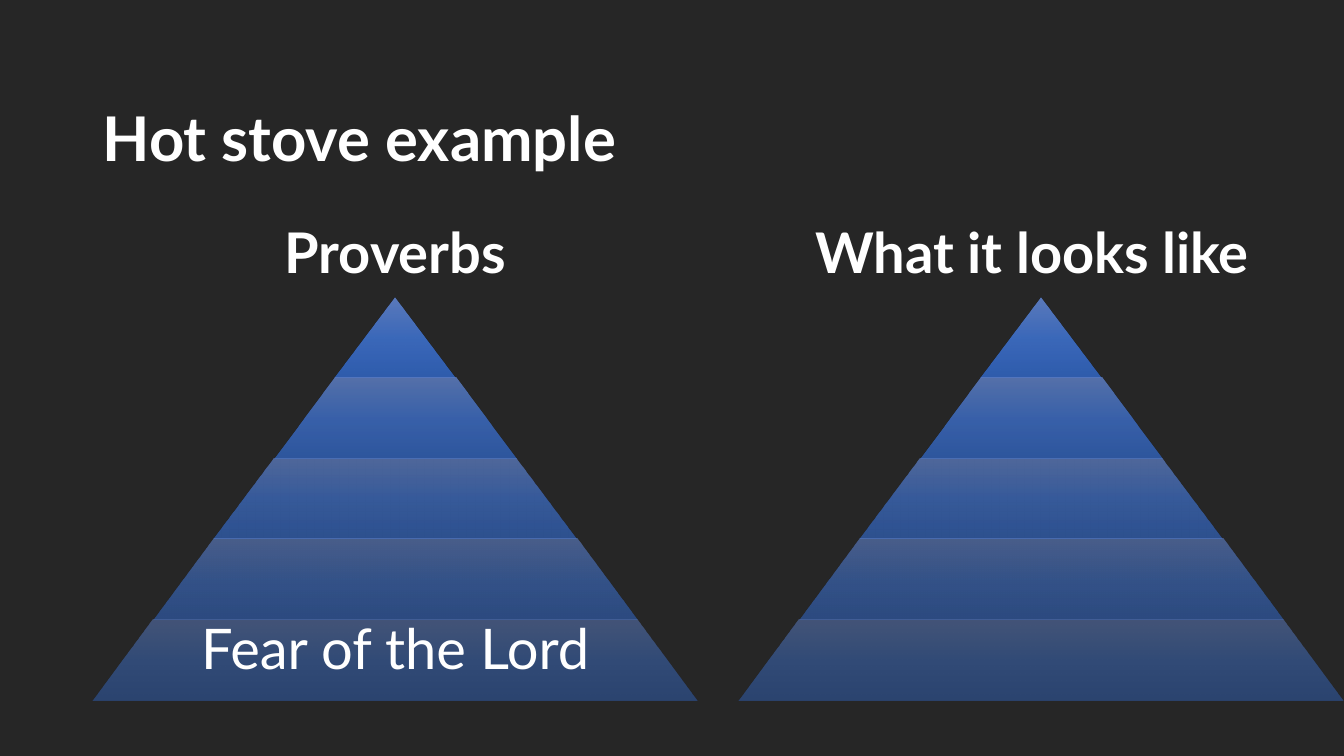
"""Build the hot stove slide: two five-tier pyramids under their headings."""
from pptx import Presentation
from pptx.dml.color import RGBColor
from pptx.enum.shapes import MSO_SHAPE
from pptx.enum.text import MSO_ANCHOR, PP_ALIGN
from pptx.oxml import parse_xml
from pptx.oxml.ns import nsdecls, qn
from pptx.util import Cm, Pt

BACKGROUND = RGBColor(0x26, 0x26, 0x26)
WHITE = RGBColor(0xFF, 0xFF, 0xFF)
TIER_COLOURS = (
    RGBColor(0x61, 0x83, 0xCB),
    RGBColor(0x3E, 0x70, 0xCA),
    RGBColor(0x30, 0x62, 0xBB),
)
FONT = "Lato"
TIER_COUNT = 5
TIER_HEIGHT = 2.03
TIER_STEP = 3.05
APEX_TOP = 7.49
BASE_WIDTH = TIER_COUNT * TIER_STEP


def write_line(frame, text, size, bold, align, spacing=1.0):
    """Write one formatted line of text into a frame."""
    frame.word_wrap = True
    para = frame.paragraphs[0]
    para.alignment = align
    para.line_spacing = spacing
    span = para.add_run()
    span.text = text
    span.font.name = FONT
    span.font.size = Pt(size)
    span.font.bold = bold
    span.font.color.rgb = WHITE


def set_title(page, text):
    """Place and fill the slide title."""
    title = page.shapes.title
    title.left, title.top = Cm(2.33), Cm(1.73)
    title.width, title.height = Cm(29.21), Cm(3.68)
    title.text_frame.vertical_anchor = MSO_ANCHOR.MIDDLE
    write_line(title.text_frame, text, 44, True, PP_ALIGN.LEFT, 0.9)


def add_label(page, text, centre, top, height, bold, spacing=1.0):
    """Add a centred text box as wide as a pyramid base."""
    box = page.shapes.add_textbox(
        Cm(centre - BASE_WIDTH / 2), Cm(top), Cm(BASE_WIDTH), Cm(height))
    write_line(box.text_frame, text, 40, bold, PP_ALIGN.CENTER, spacing)
    return box


def fill_gradient(shape, opacity):
    """Fill a shape from top to bottom with the tier colours."""
    stops = "".join(
        f'<a:gs pos="{index * 50000}"><a:srgbClr val="{colour}">'
        f'<a:alpha val="{opacity * 1000}"/></a:srgbClr></a:gs>'
        for index, colour in enumerate(TIER_COLOURS))
    gradient = parse_xml(
        f'<a:gradFill {nsdecls("a")} rotWithShape="1"><a:gsLst>{stops}</a:gsLst>'
        '<a:lin ang="5400000" scaled="0"/></a:gradFill>')
    shape.fill.gradient()
    properties = shape.element.spPr
    properties.replace(properties.find(qn("a:gradFill")), gradient)


def add_pyramid(page, centre):
    """Add a group of tiers that widen and fade downwards."""
    group = page.shapes.add_group_shape()
    for index in range(TIER_COUNT):
        width = TIER_STEP * (index + 1)
        tier = group.shapes.add_shape(
            MSO_SHAPE.TRAPEZOID, Cm(centre - width / 2),
            Cm(APEX_TOP + index * TIER_HEIGHT), Cm(width), Cm(TIER_HEIGHT))
        tier.adjustments[0] = 0.75
        tier.shadow.inherit = False
        tier.line.fill.background()
        fill_gradient(tier, 90 - 10 * index)


def main():
    """Build and save the deck."""
    deck = Presentation()
    deck.slide_width, deck.slide_height = Cm(33.87), Cm(19.05)
    page = deck.slides.add_slide(deck.slide_layouts[5])
    page.background.fill.solid()
    page.background.fill.fore_color.rgb = BACKGROUND
    set_title(page, "Hot stove example")
    for heading, heading_centre, pyramid_centre in (
            ("Proverbs", 9.96, 9.96),
            ("What it looks like", 26.01, 26.24)):
        add_label(page, heading, heading_centre, 5.56, 1.9, True, 0.9)
        add_pyramid(page, pyramid_centre)
    base = add_label(page, "Fear of the Lord", 9.96, 15.32, 1.95, False)
    base.text_frame.vertical_anchor = MSO_ANCHOR.MIDDLE
    deck.save("out.pptx")


if __name__ == "__main__":
    main()
